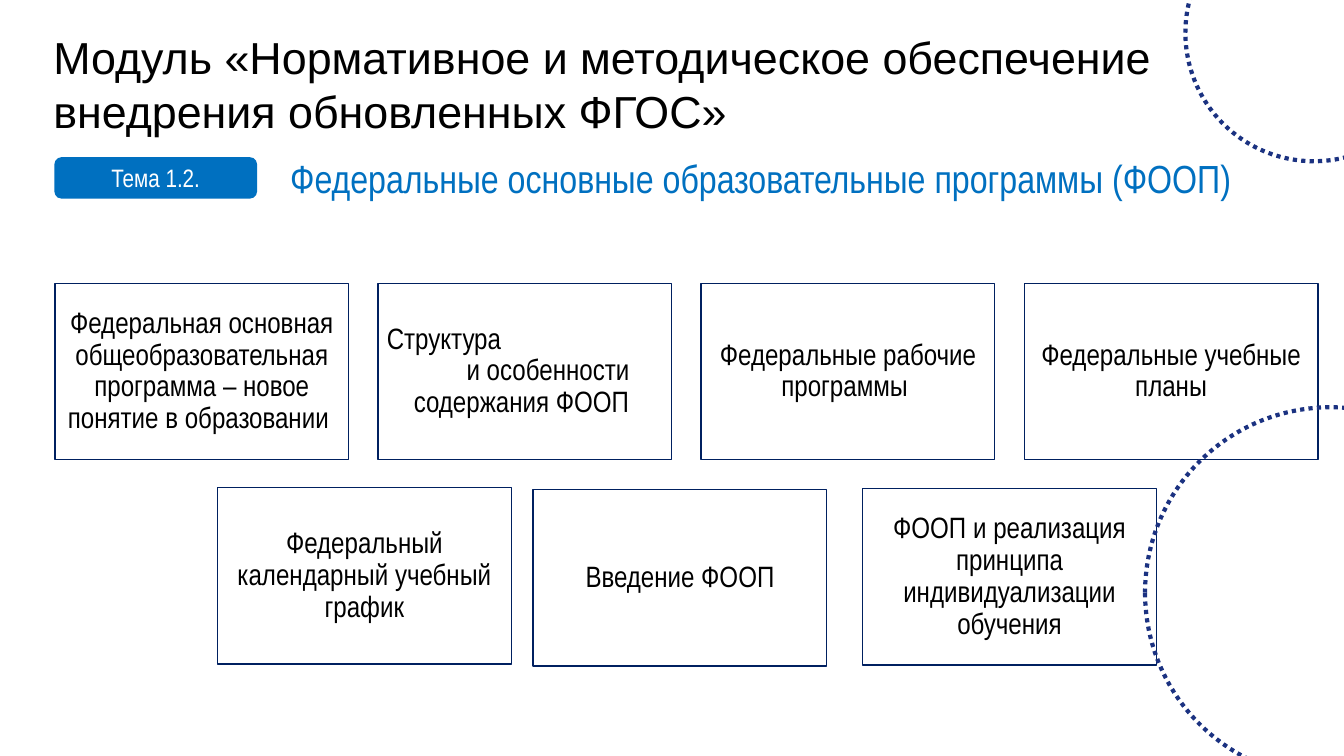
from lxml import etree
from pptx import Presentation
from pptx.dml.color import RGBColor
from pptx.enum.dml import MSO_LINE
from pptx.enum.shapes import MSO_SHAPE
from pptx.enum.text import MSO_ANCHOR, PP_ALIGN
from pptx.oxml.ns import qn
from pptx.util import Pt

RECT, ROUNDED, OVAL = MSO_SHAPE.RECTANGLE, MSO_SHAPE.ROUNDED_RECTANGLE, MSO_SHAPE.OVAL
LEFT, CENTER = PP_ALIGN.LEFT, PP_ALIGN.CENTER
MIDDLE, TOP = MSO_ANCHOR.MIDDLE, MSO_ANCHOR.TOP
DOTTED = MSO_LINE.ROUND_DOT

BLACK, WHITE, BLUE = "000000", "FFFFFF", "0070C0"
CARD_EDGE, RING_BLUE = "002060", "1B3281"
NARROW = "Arial Narrow"

CARD_W, CARD_H = 209.8, 126
CARD_STEP = 230.8
TOP_ROW_LEFT, TOP_ROW_TOP = 39.2, 202.3
TOP_ROW = [
    ["Федеральная основная общеобразовательная программа – новое понятие в образовании "],
    ["Структура", "и особенности содержания ФООП "],
    ["Федеральные рабочие программы "],
    ["Федеральные учебные планы"],
]
BOTTOM_ROW = [
    (155.4, 348.4, ["Федеральный календарный учебный график"]),
    (380.8, 349.8, ["Введение ФООП"]),
    (616.2, 349.1, ["ФООП и реализация принципа индивидуализации обучения"]),
]


def color(hex_value):
    return RGBColor.from_string(hex_value)


def add_text(frame, text, size, font=NARROW, ink=BLACK, align=LEFT,
             spacing=None, first_indent=0):
    """Fill the empty first paragraph, or append one after existing text."""
    paragraph = frame.add_paragraph() if frame.text else frame.paragraphs[0]
    if first_indent:
        properties = paragraph._p.get_or_add_pPr()
        properties.set("marL", "0")
        properties.set("indent", str(Pt(first_indent)))
    paragraph.alignment = align
    if spacing:
        paragraph.line_spacing = spacing
    run = paragraph.add_run()
    run.text = text
    run.font.name = font
    run.font.size = Pt(size)
    run.font.color.rgb = color(ink)


def add_label(slide, left, top, width, height, text, anchor=TOP, wrap=True, **style):
    frame = slide.shapes.add_textbox(Pt(left), Pt(top), Pt(width), Pt(height)).text_frame
    frame.word_wrap = wrap
    frame.vertical_anchor = anchor
    add_text(frame, text, **style)


def add_figure(slide, kind, left, top, width, height, fill=None, opacity=100,
               edge=None, edge_width=1, dash=None):
    figure = slide.shapes.add_shape(kind, Pt(left), Pt(top), Pt(width), Pt(height))
    figure.shadow.inherit = False
    if fill:
        figure.fill.solid()
        figure.fill.fore_color.rgb = color(fill)
        if opacity < 100:
            swatch = figure.fill._xPr.find(qn("a:solidFill"))[0]
            etree.SubElement(swatch, qn("a:alpha"), val=str(opacity * 1000))
    else:
        figure.fill.background()
    if edge:
        figure.line.color.rgb = color(edge)
        figure.line.width = Pt(edge_width)
        if dash:
            figure.line.dash_style = dash
    else:
        figure.line.fill.background()
    return figure


def add_ring(slide, left, top, diameter):
    add_figure(slide, OVAL, left, top, diameter, diameter,
               edge=RING_BLUE, edge_width=3, dash=DOTTED)


def add_card(slide, left, top, lines, opacity):
    card = add_figure(slide, RECT, left, top, CARD_W, CARD_H,
                      fill=WHITE, opacity=opacity, edge=CARD_EDGE)
    frame = card.text_frame
    frame.word_wrap = True
    frame.vertical_anchor = MIDDLE
    frame.margin_left = frame.margin_right = Pt(6.3)
    frame.margin_top = frame.margin_bottom = Pt(6.3)
    *lead, body = lines
    for line in lead:
        add_text(frame, line, size=21, spacing=0.9)
    add_text(frame, body, size=21, align=CENTER, spacing=0.9,
             first_indent=33 if lead else 0)


def main():
    prs = Presentation()
    prs.slide_width, prs.slide_height = Pt(960), Pt(540)
    slide = prs.slides.add_slide(prs.slide_layouts[6])

    # Heading
    add_label(slide, 31, 17, 919.4, 85,
              "Модуль «Нормативное и методическое обеспечение внедрения обновленных ФГОС»",
              anchor=MIDDLE, size=32, font="Arial")
    add_ring(slide, 846.7, -68.4, 183.6)

    # Topic badge and name
    add_label(slide, 200.2, 106.6, 697, 41,
              "Федеральные основные образовательные программы (ФООП)",
              wrap=False, size=28, ink=BLUE)
    badge = add_figure(slide, ROUNDED, 38.9, 112.3, 144.7, 29.5, fill=BLUE)
    badge.text_frame.vertical_anchor = MIDDLE
    add_text(badge.text_frame, "Тема 1.2.", size=18, ink=WHITE, align=CENTER)

    # Cards, each more transparent than the one before
    cards = [(TOP_ROW_LEFT + i * CARD_STEP, TOP_ROW_TOP, lines)
             for i, lines in enumerate(TOP_ROW)] + BOTTOM_ROW
    for i, (left, top, lines) in enumerate(cards):
        add_card(slide, left, top, lines, opacity=round(90 - 40 * i / (len(cards) - 1)))

    # Lower ring, over the cards
    add_ring(slide, 817.9, 290.9, 265)

    prs.save("out.pptx")


if __name__ == "__main__":
    main()
